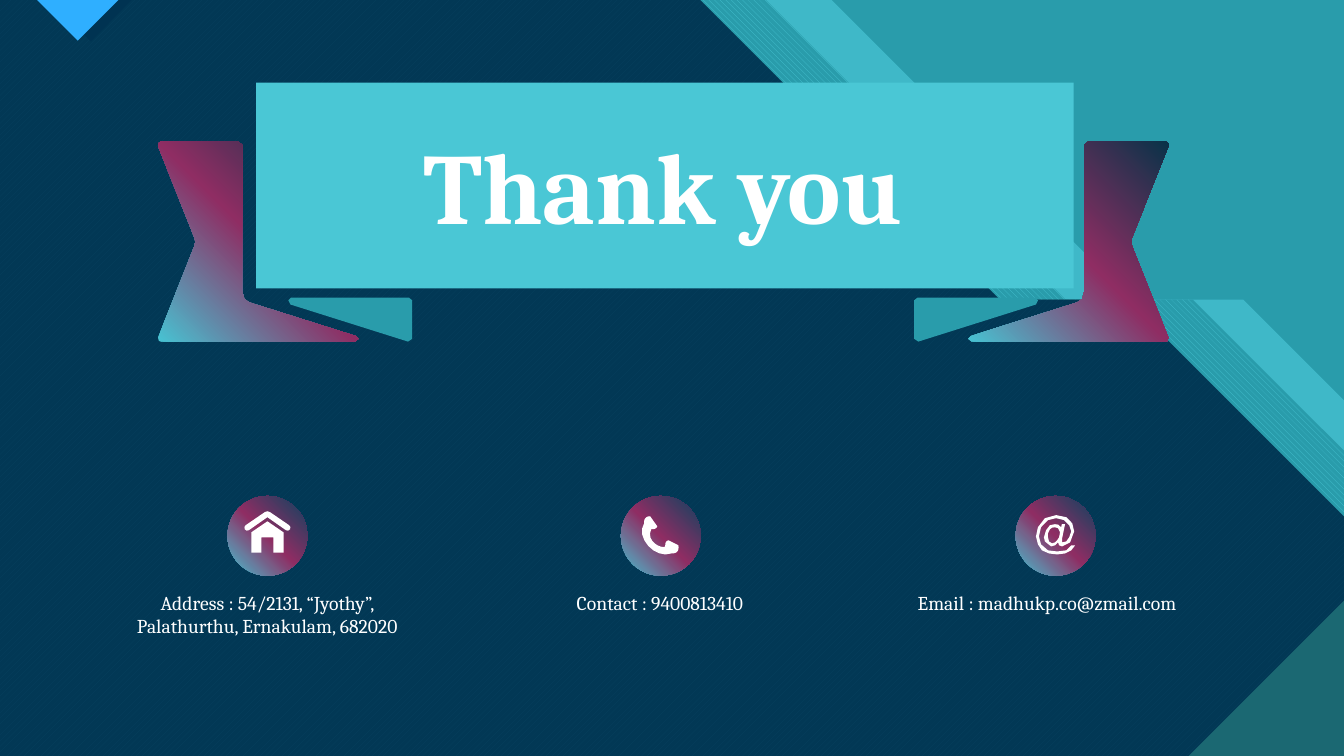
from copy import deepcopy

from lxml.etree import SubElement
from pptx import Presentation
from pptx.dml.color import RGBColor as RGB
from pptx.enum.dml import MSO_PATTERN as PAT
from pptx.enum.shapes import MSO_SHAPE as SHAPE
from pptx.enum.text import MSO_ANCHOR as ANCHOR, MSO_AUTO_SIZE as AUTO, PP_ALIGN as ALIGN
from pptx.oxml.ns import qn
from pptx.util import Pt

WHITE = RGB(0xFF, 0xFF, 0xFF)
NAVY = RGB(0x00, 0x33, 0x52)
TEAL = RGB(0x29, 0x9C, 0xAB)
CYAN = RGB(0x47, 0xC3, 0xD3)
AQUA = RGB(0x4A, 0xC7, 0xD5)
PINE = RGB(0x1B, 0x68, 0x72)
SKY = RGB(0x2F, 0xAF, 0xFF)
WINE = RGB(0x8F, 0x2D, 0x63)
INK = RGB(0x09, 0x32, 0x48)
SLATE = RGB(0x0C, 0x43, 0x60)
FONT = "Cambria"
WIDE, HIGH = 960, 540
STEP = 214
MID = 473.75

TAIL = [(254, 240), (178, 216), (174.5, 213.5), (173, 208), (173, 103.5), (170, 101),
        (115, 101), (113, 102.5), (113, 104.5), (139, 170), (139.5, 172.5), (139, 175.5),
        (113, 241), (113.5, 243.5), (115, 244), (253.5, 244), (256, 242)]
FOLD = [(292, 212.5), (208, 212.5), (206, 214.5), (207.5, 217.5), (291.5, 244),
        (294.5, 242), (294.5, 214.5)]

WALL = [(0, -10.4), (11.5, -2.5), (11.5, 11.9), (4.3, 11.9), (4.3, 1)]
ROOF = [(0, -17.6), (1.8, -17), (15.5, -7.6), (16.4, -6.3), (16.2, -4.7),
        (14.8, -3.7), (13.3, -4), (0, -13.3)]
PHONE = [(-7.6, -14), (-2.5, -6.8),
         (-3.2, -4.7, -5.4, -4.7, -6.8, -4.7), (-11.2, 4, 1.1, 9.7, 3.2, 7.6),
         (3.2, 5.4, 3.2, 4, 5.4, 3.2), (12.6, 6.8),
         (13.3, 11.9, 10.4, 12.6, 7.6, 12.6), (-4, 16.9, -18.4, 1.1, -11.9, -9),
         (-11.9, -9, -12.6, -14, -7.6, -14)]
RING = [(0.4, -14.8), (7.6, -13.3), (11.9, -9), (13.3, -3.2), (10.4, 4.7), (4.7, 7.6),
        (2.5, 6.8), (1.8, 4.7), (-0.4, 6.8), (-3.2, 7.6), (-7.6, 4), (-8.3, 1.1),
        (-6.8, -4), (-4, -7.6), (-0.4, -8.3), (1.8, -8), (4, -6.1), (4.5, -8.3),
        (6.8, -8.3), (4.7, 1.8), (4.7, 4.7), (7.6, 4), (9.7, 1.1), (11.2, -3.2),
        (9.7, -7.6), (6.1, -11.2), (0.4, -12.6), (-5.4, -11.2), (-10.4, -6.1),
        (-11.9, 0.4), (-10.4, 6.1), (-5.4, 10.4), (1.1, 11.2), (7.6, 10.4),
        (11.2, 6.8), (14, 6.8), (11.2, 10.4), (6.8, 12.6), (1.1, 13.3), (-4.7, 12.6),
        (-9.7, 10.4), (-12.6, 6.1), (-14, 0.4), (-12.6, -6.1), (-7.6, -12.6)]
HOLE = [(-0.4, -6.1), (-2.5, -5.8), (-4, -4.7), (-5.4, -1.8), (-5.4, 1.1), (-4.7, 4),
        (-2.5, 5.4), (-0.4, 4.7), (1.1, 3.2), (2.5, 1.1), (3.2, -2.5), (1.8, -5.4)]


def flip(path, axis=0):
    return [(2 * axis - x, y) for x, y in path]


def whole(half):
    return half + flip(half)[::-1]


def bend(path, steps=8):
    out = []
    for node in path:
        if len(node) == 2:
            out.append(node)
            continue
        ctrl = [out[-1], node[:2], node[2:4], node[4:]]
        for i in range(1, steps + 1):
            t = i / steps
            parts = ((1 - t) ** 3, 3 * t * (1 - t) ** 2, 3 * t * t * (1 - t), t ** 3)
            out.append(tuple(sum(w * p[k] for w, p in zip(parts, ctrl)) for k in (0, 1)))
    return out


def plain(shape):
    shape.shadow.inherit = False
    shape.line.fill.background()
    return shape


def paint(shape, color, alpha=None):
    plain(shape).fill.solid()
    shape.fill.fore_color.rgb = color
    if alpha:
        node = shape._element.spPr.find(".//" + qn("a:srgbClr"))
        SubElement(node, qn("a:alpha")).set("val", str(alpha * 1000))


def hatch(shape, kind, fore, back):
    fill = plain(shape).fill
    fill.patterned()
    fill.pattern = kind
    fill.fore_color.rgb = fore
    fill.back_color.rgb = back


def blend(shape, last):
    fill = plain(shape).fill
    fill.gradient()
    fill.gradient_angle = 45
    stops = shape._element.spPr.find(".//" + qn("a:gsLst"))
    stops.append(deepcopy(stops[0]))
    for stop, place, color in zip(fill.gradient_stops, (0, 0.5, 1), (CYAN, WINE, last)):
        stop.position = place
        stop.color.rgb = color


def trace(slide, *paths, at=(0, 0)):
    paths = [[(Pt(x + at[0]), Pt(y + at[1])) for x, y in path] for path in paths]
    pen = slide.shapes.build_freeform(*paths[0][0])
    pen.add_line_segments(paths[0][1:])
    for path in paths[1:]:
        pen.move_to(*path[0])
        pen.add_line_segments(path[1:])
    return pen.convert_to_shape()


def preset(slide, kind, *box):
    return slide.shapes.add_shape(kind, *map(Pt, box))


def band(slide, top, knee):
    return trace(slide, [(0, 0), (top, 0), (top + STEP, STEP), (knee, STEP),
                         (WIDE, STEP + WIDE - knee), (WIDE, HIGH), (0, HIGH)])


def write(shape, text, size, bold=False):
    frame = shape.text_frame
    frame.text = text
    frame.word_wrap = True
    frame.auto_size = AUTO.NONE
    frame.vertical_anchor = ANCHOR.TOP
    line = frame.paragraphs[0]
    line.alignment = ALIGN.CENTER
    line.line_spacing = 1.0
    line.space_before = Pt(0)
    font = line.runs[0].font
    font.name, font.size, font.bold = FONT, Pt(size), bold
    font.color.rgb = WHITE


def back(slide):
    paint(preset(slide, SHAPE.RECTANGLE, 0, 0, WIDE, HIGH), TEAL)
    paint(band(slide, 594, 888), CYAN, 74)
    hatch(band(slide, 547, 852), PAT.WIDE_DOWNWARD_DIAGONAL, CYAN, TEAL)
    hatch(band(slide, 500, 805), PAT.WIDE_UPWARD_DIAGONAL, CYAN, PINE)
    paint(band(slide, 500, 805), NAVY, 90)
    paint(trace(slide, [(35, 0), (65, 29.5), (94, 0)]), NAVY)
    paint(trace(slide, [(26.5, 0), (55.5, 29), (84.5, 0)]), SKY)
    paint(trace(slide, [(849, HIGH), (WIDE, HIGH), (WIDE, 429)]), PINE)


def ribbon(slide):
    paint(preset(slide, SHAPE.RECTANGLE, 183, 59, 584, 147), AQUA)
    for tail in (TAIL, flip(TAIL, MID)):
        blend(trace(slide, tail), INK)
    for fold in (FOLD, flip(FOLD, MID)):
        paint(trace(slide, fold), TEAL)


def title(slide):
    head = slide.shapes.title
    head.left, head.top, head.width, head.height = map(Pt, (253.5, 85, 440, 94.5))
    write(head, "Thank you", 72, True)
    slide.shapes._spTree.append(head._element)


def contact(slide, x, mid, wide, high, text, icon):
    y, size = 382.75, 57
    blend(preset(slide, SHAPE.OVAL, x - size / 2, y - size / 2, size, size), SLATE)
    paint(trace(slide, *icon, at=(x, y)), WHITE)
    box = slide.shapes.add_textbox(*map(Pt, (mid - wide / 2, 418.5, wide, high)))
    write(box, text, 14)


def main():
    deck = Presentation()
    deck.slide_width, deck.slide_height = Pt(WIDE), Pt(HIGH)
    slide = deck.slides.add_slide(deck.slide_layouts[5])
    back(slide)
    ribbon(slide)
    title(slide)
    contact(slide, 191, 191, 210, 58, "Address : 54/2131, “Jyothy”, Palathurthu, Ernakulam, 682020",
            [whole(WALL), whole(ROOF)])
    contact(slide, 472, 471.5, 210, 24.5, "Contact : 9400813410", [bend(PHONE)])
    contact(slide, 754, 748, 226, 24.5, "Email : madhukp.co@zmail.com", [RING, HOLE])
    deck.save("out.pptx")


if __name__ == "__main__":
    main()
